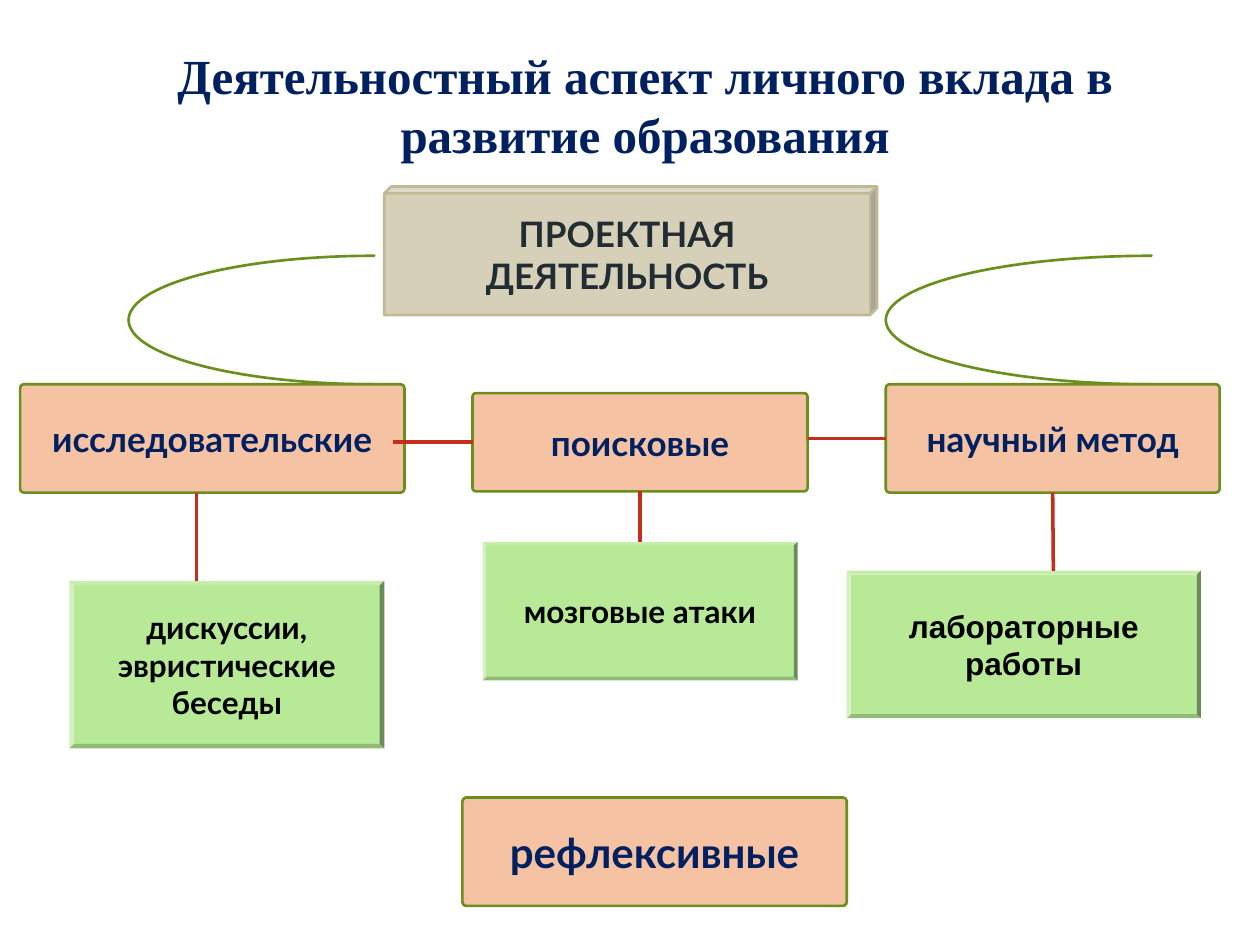
from dataclasses import dataclass

from lxml import etree
from pptx import Presentation
from pptx import util as u
from pptx.dml.color import RGBColor
from pptx.enum import shapes, text
from pptx.oxml import ns


@dataclass(frozen=True)
class Theme:
    navy: str = "002060"
    slate: str = "212D32"
    black: str = "000000"
    sand: str = "D6D0B8"
    sand_edge: str = "C1B995"
    peach: str = "F5C2A3"
    coral: str = "F2A499"
    olive: str = "6A8F1C"
    green: str = "B7E996"
    red: str = "C42F1A"
    body_font: str = "Lato"
    plain_font: str = "Arial"
    title_font: str = "Times New Roman"
    title_size: int = 28
    accent_size: int = 24
    method_size: int = 20
    example_size: int = 18
    edge_width: float = 1.5
    link_width: float = 2


class Board:
    def __init__(self, slide, theme):
        self.slide = slide
        self.theme = theme

    def fill_text(self, frame, wording, size, color, font):
        frame.word_wrap = True
        for index, line in enumerate(wording.split("\n")):
            paragraph = frame.paragraphs[0] if index == 0 else frame.add_paragraph()
            paragraph.alignment = text.PP_ALIGN.CENTER
            run = paragraph.add_run()
            run.text = line
            for key, value in dict(size=u.Pt(size), bold=True, name=font).items():
                setattr(run.font, key, value)
            run.font.color.rgb = RGBColor.from_string(color)

    def title(self, wording, box):
        heading = self.slide.shapes.add_textbox(*map(u.Inches, box))
        self.fill_text(heading.text_frame, wording, self.theme.title_size,
                       self.theme.navy, self.theme.title_font)

    def block(self, preset, box, adjustments, fill, edge=None):
        block = self.slide.shapes.add_shape(preset, *map(u.Inches, box))
        block.shadow.inherit = False
        for index, value in enumerate(adjustments):
            block.adjustments[index] = value
        block.fill.solid()
        block.fill.fore_color.rgb = RGBColor.from_string(fill)
        if edge:
            block.line.color.rgb = RGBColor.from_string(edge)
            block.line.width = u.Pt(self.theme.edge_width)
        else:
            block.line.fill.background()
        return block

    def label(self, block, wording, size, color, font=None):
        block.text_frame.vertical_anchor = text.MSO_ANCHOR.MIDDLE
        self.fill_text(block.text_frame, wording, size, color, font or self.theme.body_font)

    def topic(self, wording, box):
        t = self.theme
        topic = self.block(shapes.MSO_SHAPE.CUBE, box, [0.054], t.sand, t.sand_edge)
        self.label(topic, wording, t.method_size, t.slate)

    def arc(self, box):
        self.block(shapes.MSO_SHAPE.CURVED_RIGHT_ARROW, box, [0, 0, 0],
                   self.theme.coral, self.theme.olive)

    def method(self, wording, box, size=None):
        t = self.theme
        method = self.block(shapes.MSO_SHAPE.ROUNDED_RECTANGLE, box, [0.036], t.peach, t.olive)
        self.label(method, wording, size or t.method_size, t.navy)
        return method

    def example(self, wording, box, font=None):
        t = self.theme
        example = self.block(shapes.MSO_SHAPE.BEVEL, box, [0.027], t.green)
        self.label(example, wording, t.example_size, t.black, font)

    def link(self, start, finish, begin=None, end=None):
        link = self.slide.shapes.add_connector(
            shapes.MSO_CONNECTOR.STRAIGHT, *map(u.Inches, start + finish))
        link.line.color.rgb = RGBColor.from_string(self.theme.red)
        link.line.width = u.Pt(self.theme.link_width)
        etree.SubElement(link._element.spPr, ns.qn("a:effectLst"))
        if begin:
            link.begin_connect(*begin)
        if end:
            link.end_connect(*end)


def main():
    deck = Presentation()
    deck.slide_width, deck.slide_height = u.Inches(10), u.Inches(7.5)
    theme = Theme()
    board = Board(deck.slides.add_slide(deck.slide_layouts[6]), theme)

    board.topic("ПРОЕКТНАЯ ДЕЯТЕЛЬНОСТЬ", (3.05, 1.48, 3.91, 1.02))
    for left, width in ((1.02, 1.95), (7.03, 2.11)):
        board.arc((left, 2.03, width, 1.02))

    board.method("исследовательские", (0.16, 3.05, 3.05, 0.86))
    search = board.method("поисковые", (3.75, 3.12, 2.66, 0.78))
    science = board.method("научный метод", (7.03, 3.05, 2.65, 0.86))

    board.example("дискуссии,\nэвристические беседы", (0.55, 4.61, 2.5, 1.33))
    board.example("мозговые атаки", (3.83, 4.3, 2.5, 1.1))
    board.example("лабораторные работы", (6.72, 4.53, 2.81, 1.17), theme.plain_font)

    board.method("рефлексивные", (3.67, 6.33, 3.05, 0.86), theme.accent_size)

    board.link((1.56, 3.91), (1.56, 4.61))
    board.link((3.12, 3.51), (3.75, 3.51), end=(search, 1))
    board.link((6.41, 3.48), (7.03, 3.48), end=(science, 1))
    board.link((8.36, 3.91), (8.36, 4.53), begin=(science, 2))
    board.link((5.08, 3.9), (5.08, 4.3), begin=(search, 2))

    board.title("Деятельностный аспект личного вклада в развитие образования",
                (0.94, 0.31, 8.36, 1.03))
    deck.save("out.pptx")


if __name__ == "__main__":
    main()
